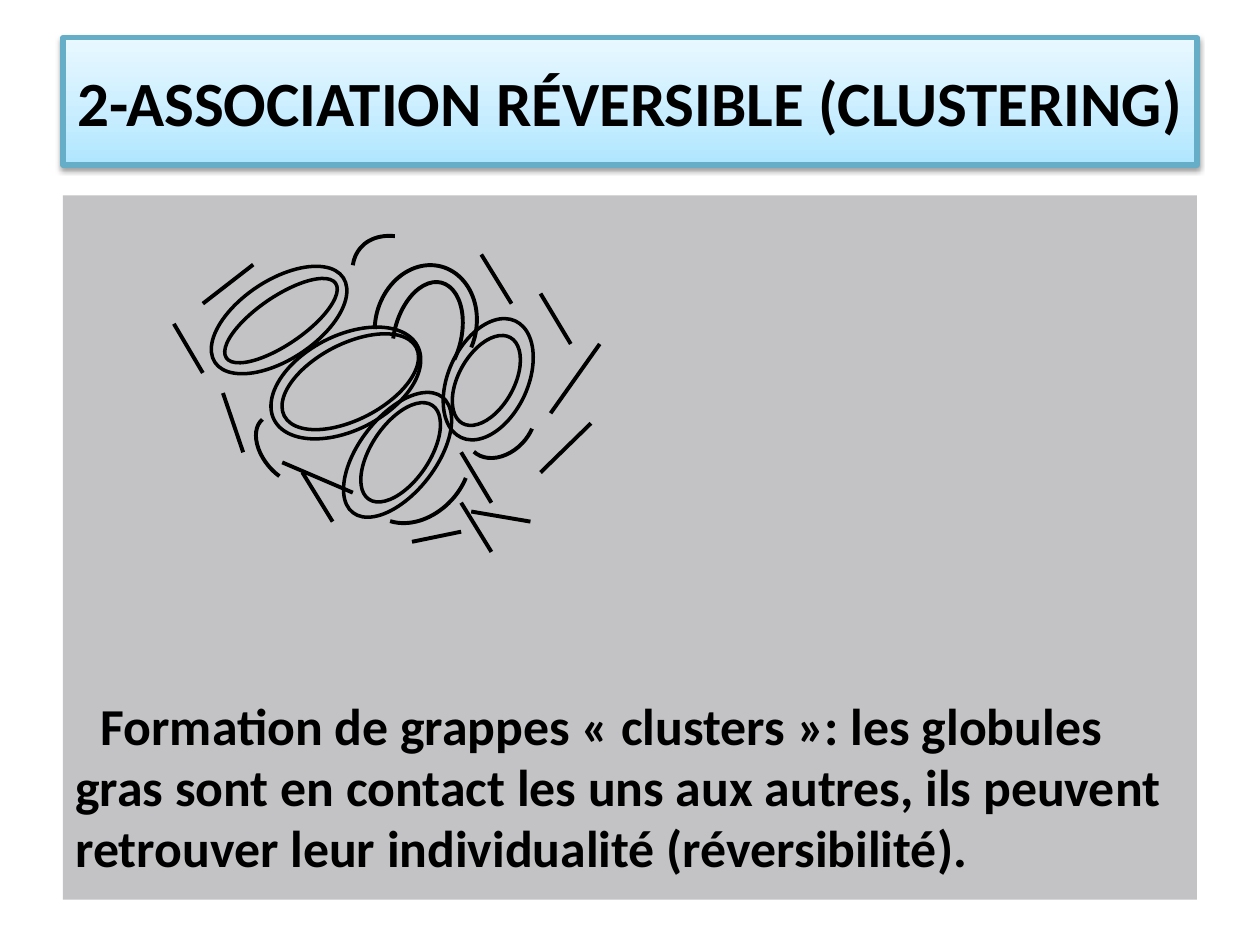
"""Build a slide on the reversible clustering of fat globules."""
import copy
from dataclasses import dataclass

import lxml.etree
import pptx
import pptx.dml.color
import pptx.enum.shapes
import pptx.enum.text
import pptx.oxml.ns
import pptx.util

COLS, ROWS = 100, 75
WIDE, HIGH = pptx.util.Inches(10), pptx.util.Inches(7.5)
FONT = "Calibri"
HUES = {"ink": "000000", "edge": "66AEC7", "panel": "C3C2C5",
        "low": "AEE6FF", "mid": "C6EDFF", "top": "E9F8FF"}
KINDS = pptx.enum.shapes.MSO_SHAPE
ALIGN = pptx.enum.text.PP_ALIGN
ANCHOR = pptx.enum.text.MSO_ANCHOR


@dataclass
class Box:
    col: float
    row: float
    cols: float
    rows: float


@dataclass
class Ring:
    box: Box
    turn: float


@dataclass
class Arc:
    box: Box
    turn: float
    start: float
    end: float


@dataclass
class Dash:
    col: float
    row: float
    to_col: float
    to_row: float


RINGS = [
    Ring(Box(19, 19.3, 6.3, 12.2), 56.6),
    Ring(Box(29.5, 31.4, 4.6, 9), 34.1),
    Ring(Box(23.7, 24, 7.5, 12.8), 62.8),
    Ring(Box(28.5, 30.3, 6.1, 11.6), 37.7),
    Ring(Box(35.6, 25, 6.3, 10.2), 24.9),
    Ring(Box(20.4, 20.2, 3.8, 10.5), 55.7),
    Ring(Box(24.8, 24.4, 6, 11.8), 62.6),
    Ring(Box(36.4, 26.3, 4.4, 7.8), 29.2),
]
ARCS = [
    Arc(Box(29.8, 21, 8, 9.6), 14.6, 96.43, 6.99),
    Arc(Box(31.3, 22.3, 5.3, 8.7), 14.6, 96.43, 16.43),
    Arc(Box(36.6, 31.2, 6.3, 4.7), 133, 142.69, 0),
    Arc(Box(28.3, 33.5, 9.6, 7.4), 133, 142.69, 206.55),
    Arc(Box(19.7, 33.7, 6.3, 4), 230, 142.69, 0),
    Arc(Box(28.8, 18, 6.9, 9.6), 310.7, 150.98, 183.99),
]
DASHES = [
    Dash(38.2, 20.2, 40.6, 24.1), Dash(22.4, 36.7, 28, 39.1),
    Dash(42.9, 23.3, 45.3, 27.3), Dash(13.8, 25.7, 16.1, 29.6),
    Dash(36.6, 39.9, 39, 43.8), Dash(47.6, 27.3, 43.7, 32.8),
    Dash(46.9, 33.6, 42.9, 37.5), Dash(24, 37.5, 26.4, 41.4),
    Dash(37.4, 40.6, 42.1, 41.4), Dash(32.7, 43, 36.6, 42.2),
    Dash(17.7, 31.2, 19.3, 35.9), Dash(36.6, 35.9, 39, 39.9),
    Dash(16.1, 24.1, 20.1, 21),
]


def tint(name: str) -> pptx.dml.color.RGBColor:
    return pptx.dml.color.RGBColor.from_string(HUES[name])


def across(cols: float) -> int:
    return round(WIDE * cols / COLS)


def down(rows: float) -> int:
    return round(HIGH * rows / ROWS)


def trace(line, name: str, width: float) -> None:
    line.color.rgb = tint(name)
    line.width = pptx.util.Pt(width)


def place(slide, kind, box: Box, turn: float = 0):
    shape = slide.shapes.add_shape(kind, across(box.col), down(box.row),
                                   across(box.cols), down(box.rows))
    shape.rotation = turn
    shape.shadow.inherit = False
    return shape


def draw_ring(slide, ring: Ring) -> None:
    shape = place(slide, KINDS.OVAL, ring.box, ring.turn)
    shape.fill.background()
    trace(shape.line, "ink", 2)


def draw_arc(slide, arc: Arc) -> None:
    shape = place(slide, KINDS.ARC, arc.box, arc.turn)
    shape.adjustments[0] = arc.start
    shape.adjustments[1] = arc.end
    shape.fill.background()
    trace(shape.line, "ink", 2.25)


def draw_dash(slide, dash: Dash) -> None:
    line = slide.shapes.add_connector(
        pptx.enum.shapes.MSO_CONNECTOR.STRAIGHT, across(dash.col),
        down(dash.row), across(dash.to_col), down(dash.to_row))
    trace(line.line, "ink", 2.25)
    lxml.etree.SubElement(line._element.spPr, pptx.oxml.ns.qn("a:effectLst"))


def write(para, text: str, size: float) -> None:
    run = para.add_run()
    run.text = text
    run.font.name = FONT
    run.font.size = pptx.util.Pt(size)
    run.font.bold = True
    run.font.color.rgb = tint("ink")


def shade(shape) -> None:
    name = pptx.oxml.ns.qn
    shape.fill.gradient()
    shape.fill.gradient_angle = 90
    stops = shape._element.spPr.find(".//" + name("a:gsLst"))
    stops.append(copy.deepcopy(stops[0]))
    marks = [(0, "low"), (0.35, "mid"), (1, "top")]
    for stop, (spot, hue) in zip(shape.fill.gradient_stops, marks):
        stop.position = spot
        stop.color.rgb = tint(hue)
    glow = lxml.etree.SubElement(
        shape._element.spPr.find(name("a:effectLst")), name("a:outerShdw"),
        blurRad=str(pptx.util.Pt(3.1)), dist=str(pptx.util.Pt(1.6)),
        dir="5400000", rotWithShape="0")
    ink = lxml.etree.SubElement(glow, name("a:srgbClr"), val=HUES["ink"])
    lxml.etree.SubElement(ink, name("a:alpha"), val="38000")


def draw_title(slide) -> None:
    shape = place(slide, KINDS.RECTANGLE, Box(5, 3, 90, 10.1))
    shade(shape)
    trace(shape.line, "edge", 3)
    frame = shape.text_frame
    frame.word_wrap = False
    frame.vertical_anchor = ANCHOR.MIDDLE
    para = frame.paragraphs[0]
    para.alignment = ALIGN.CENTER
    write(para, "2-ASSOCIATION RÉVERSIBLE (CLUSTERING)", 36)


def draw_body(slide) -> None:
    shape = place(slide, KINDS.RECTANGLE, Box(5, 15.5, 90, 55.9))
    shape.fill.solid()
    shape.fill.fore_color.rgb = tint("panel")
    shape.line.fill.background()
    frame = shape.text_frame
    frame.word_wrap = True
    frame.vertical_anchor = ANCHOR.BOTTOM
    frame.margin_bottom = down(1.6)
    para = frame.paragraphs[0]
    para.alignment = ALIGN.LEFT
    para.line_spacing = 0.98
    para._p.get_or_add_pPr().set("indent", str(across(2)))
    write(para, "Formation de grappes « clusters »: les globules gras sont "
          "en contact les uns aux autres, ils peuvent retrouver leur "
          "individualité (réversibilité).", 29.6)


def main() -> None:
    deck = pptx.Presentation()
    deck.slide_width, deck.slide_height = WIDE, HIGH
    slide = deck.slides.add_slide(deck.slide_layouts[6])
    draw_title(slide)
    draw_body(slide)
    for ring in RINGS:
        draw_ring(slide, ring)
    for arc in ARCS:
        draw_arc(slide, arc)
    for dash in DASHES:
        draw_dash(slide, dash)
    deck.save("out.pptx")


if __name__ == "__main__":
    main()
